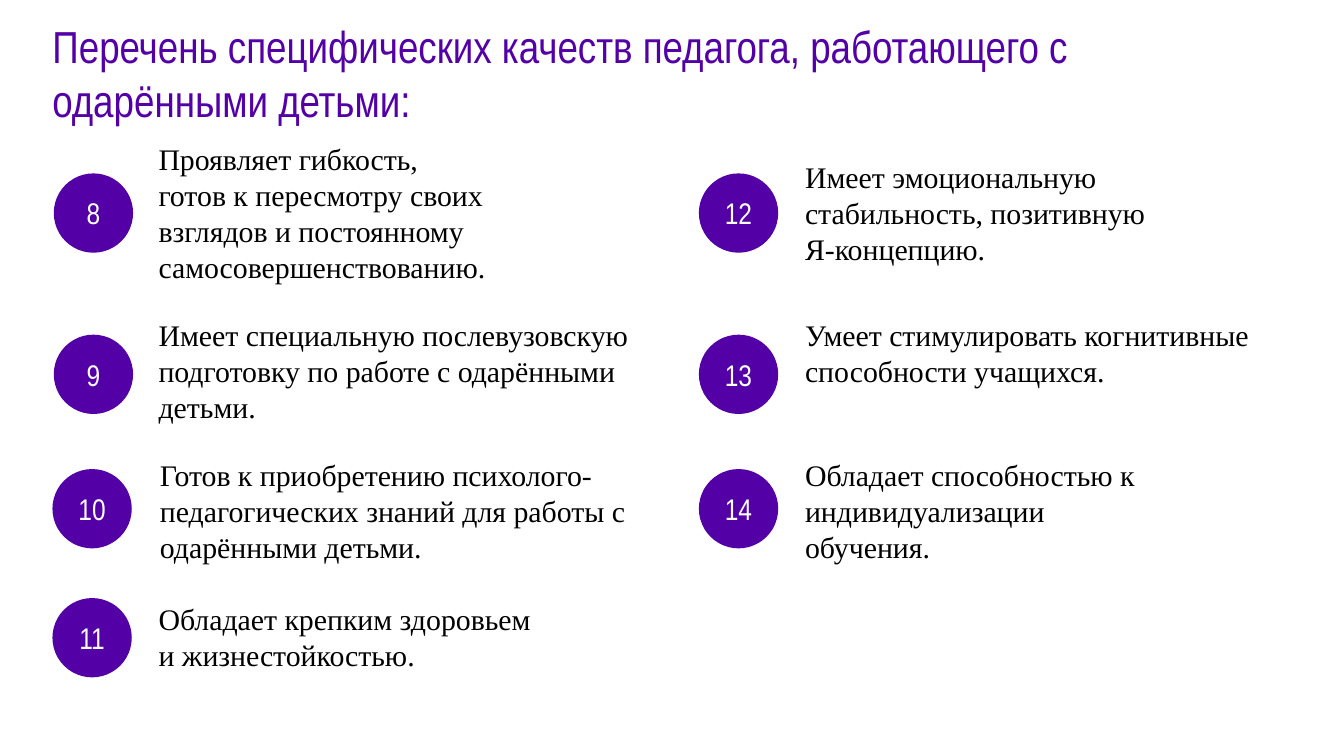
"""Build the slide listing qualities of a teacher of gifted children."""
from pptx import Presentation
from pptx.dml.color import RGBColor
from pptx.enum.shapes import MSO_SHAPE as Shape
from pptx.enum.text import MSO_ANCHOR as Anchor, PP_ALIGN as Align
from pptx.util import Emu, Pt

TITLE = "Перечень специфических качеств педагога, работающего с одарёнными детьми:"
QUALITIES = [
    (8, (40, 129), (98, 105, 410), 4, "Проявляет гибкость,\vготов к пересмотру своих\vвзглядов и постоянному самосовершенствованию."),
    (9, (40, 249), (98, 236, 382), 3, "Имеет специальную послевузовскую подготовку по работе с одарёнными детьми."),
    (10, (39, 349), (99, 340, 382), 3, "Готов к приобретению психолого-педагогических знаний для работы с одарёнными детьми."),
    (11, (39, 445), (98, 447, 382), 2, "Обладает крепким здоровьем\vи жизнестойкостью."),
    (12, (520, 129), (579, 118, 369), 3, "Имеет эмоциональную стабильность, позитивную\vЯ-концепцию."),
    (13, (520, 249), (579, 236, 382), 3, "Умеет стимулировать когнитивные способности учащихся."),
    (14, (520, 349), (579, 340, 382), 3, "Обладает способностью к индивидуализации\nобучения."),
]
COLORS = {"accent": "5300A6", "body": "000000", "number": "FFFFFF"}
HEADING_FONT, BODY_FONT = "Arial Narrow", "Times New Roman"
SLIDE_WIDTH, CIRCLE, LINE, INDENT = 1000, 59, 27, 20


def px(length):
    return Emu(length * 9144)


def rgb(role):
    return RGBColor.from_string(COLORS[role])


def write(shape, text, size, font, role, indent=0, align=Align.LEFT):
    frame = shape.text_frame
    frame.word_wrap = True
    frame.margin_left = px(indent)
    frame.margin_top = frame.margin_right = frame.margin_bottom = 0
    frame.text = text
    for paragraph in frame.paragraphs:
        paragraph.alignment = align
        for run in paragraph.runs:
            run.font.size = Pt(size)
            run.font.name = font
            run.font.color.rgb = rgb(role)


def add_text(slide, box, *style, **layout):
    write(slide.shapes.add_textbox(*map(px, box)), *style, **layout)


def add_number(slide, number, corner):
    circle = slide.shapes.add_shape(Shape.OVAL, *map(px, (*corner, CIRCLE, CIRCLE)))
    circle.shadow.inherit = False
    circle.fill.solid()
    circle.fill.fore_color.rgb = rgb("accent")
    circle.line.fill.background()
    write(circle, str(number), 16, HEADING_FONT, "number", align=Align.CENTER)
    circle.text_frame.vertical_anchor = Anchor.MIDDLE


def main():
    deck = Presentation()
    deck.slide_width = px(SLIDE_WIDTH)
    deck.slide_height = px(SLIDE_WIDTH) * 9 // 16
    slide = deck.slides.add_slide(deck.slide_layouts[6])
    add_text(slide, (39, 14, 864, 81), TITLE, 24, HEADING_FONT, "accent")
    for number, corner, text_box, lines, quality in QUALITIES:
        add_number(slide, number, corner)
        box = (*text_box, lines * LINE)
        add_text(slide, box, quality, 16, BODY_FONT, "body", indent=INDENT)
    deck.save("out.pptx")


if __name__ == "__main__":
    main()
